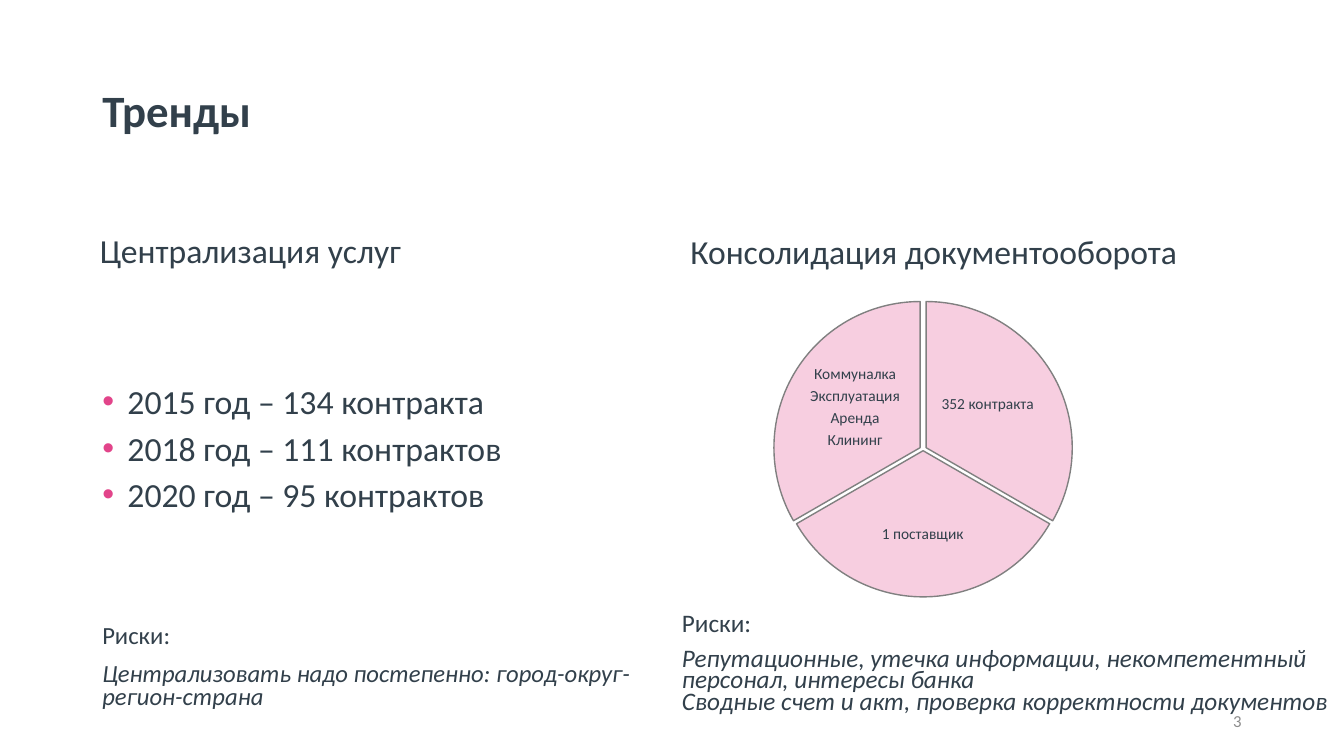
"""Build the trends slide: contract counts, a three-part pie and the risks."""
from lxml import etree
from pptx import Presentation
from pptx import util as u
from pptx.dml.color import RGBColor
from pptx.enum import shapes, text
from pptx.oxml import ns

COLUMNS, ROWS = 160, 90
CELL = u.Inches(7.5) / ROWS
COLORS = {"ink": "32404B", "accent": "E2448A", "sector": "F7CEE0",
          "outline": "808080", "muted": "8C8C8C"}
PIE_LEFT, PIE_TOP, PIE_SIZE, PIE_GAP = 92.5, 35.9, 34.8, 0.36


def color(name):
    return RGBColor.from_string(COLORS[name])


def cells(*values):
    return [u.Emu(round(value * CELL)) for value in values]


def add_text(slide, area, lines, size, ink="ink", anchor="TOP", align="LEFT",
             spacing=0.9, before=0, after=0, inset=None):
    frame = slide.shapes.add_textbox(*cells(*area)).text_frame
    frame.word_wrap = True
    frame.vertical_anchor = getattr(text.MSO_ANCHOR, anchor)
    if inset is not None:
        frame.margin_left = frame.margin_right = u.Inches(inset)
        frame.margin_top = frame.margin_bottom = u.Inches(inset)
    frame.text = "\n".join(lines)
    for paragraph in frame.paragraphs:
        paragraph.alignment = getattr(text.PP_ALIGN, align)
        paragraph.line_spacing = spacing
        paragraph.space_before = u.Pt(before)
        paragraph.space_after = u.Pt(after)
        paragraph.font.name = "Calibri"
        paragraph.font.size = u.Pt(size)
        paragraph.font.color.rgb = color(ink)
    return frame.paragraphs


def add_bullets(slide, area, lines, size):
    for paragraph in add_text(slide, area, lines, size, spacing=0.8, before=10):
        properties = paragraph._p.get_or_add_pPr()
        properties.set("marL", str(u.Inches(0.25)))
        properties.set("indent", str(-u.Inches(0.25)))
        bullet_color = etree.SubElement(properties, ns.qn("a:buClr"))
        etree.SubElement(bullet_color, ns.qn("a:srgbClr"), val=COLORS["accent"])
        etree.SubElement(properties, ns.qn("a:buFont"), typeface="Arial")
        etree.SubElement(properties, ns.qn("a:buChar"), char="•")


def add_risks(slide, area, risks, size, spacing):
    paragraphs = add_text(slide, area, ["Риски:", risks], size,
                          spacing=spacing, before=10)
    paragraphs[1].font.italic = True


def add_sector(slide, start, end, shift):
    left, top = PIE_LEFT + shift[0] * PIE_GAP, PIE_TOP + shift[1] * PIE_GAP
    sector = slide.shapes.add_shape(shapes.MSO_SHAPE.PIE,
                                    *cells(left, top, PIE_SIZE, PIE_SIZE))
    sector.adjustments[0], sector.adjustments[1] = start * 0.6, end * 0.6
    sector.shadow.inherit = False
    sector.fill.solid()
    sector.fill.fore_color.rgb = color("sector")
    sector.line.color.rgb = color("outline")
    sector.line.width = u.Pt(1)


def add_pie(slide):
    sectors = [
        (270, 30, (1, 0), (111.7, 42.4, 11.8, 11.6), ["352 контракта"]),
        (30, 150, (0, 1), (102, 58.2, 15.7, 10.8), ["1 поставщик"]),
        (150, 270, (-1, 0), (95.9, 42.7, 11.8, 11.6),
         ["Коммуналка", "Эксплуатация", "Аренда", "Клининг"]),
    ]
    for start, end, shift, label_area, label in sectors:
        add_sector(slide, start, end, shift)
        add_text(slide, label_area, label, 11, anchor="MIDDLE",
                 align="CENTER", after=3.85, inset=0.02)


def main():
    presentation = Presentation()
    presentation.slide_width, presentation.slide_height = cells(COLUMNS, ROWS)
    slide = presentation.slides.add_slide(presentation.slide_layouts[6])

    title = add_text(slide, (11, 4.8, 138, 17.4), ["Тренды"], 32, anchor="MIDDLE")
    title[0].font.bold = True
    add_text(slide, (10.7, 22, 67.7, 10.8), ["Централизация услуг"], 24,
             anchor="BOTTOM")
    add_text(slide, (81, 22.1, 68, 10.8), ["Консолидация документооборота"], 24,
             anchor="BOTTOM")
    add_bullets(slide, (11, 45.7, 67, 18),
                ["2015 год – 134 контракта", "2018 год – 111 контрактов",
                 "2020 год – 95 контрактов"], 24.1)
    add_risks(slide, (11, 73.9, 67, 14),
              "Централизовать надо постепенно: город-округ-регион-страна",
              17.6, 0.8)
    add_pie(slide)
    add_risks(slide, (80, 72.7, 80, 13.1),
              "Репутационные, утечка информации, некомпетентный персонал, "
              "интересы банка\vСводные счет и акт, проверка корректности документов",
              18, 0.7)
    add_text(slide, (113, 83.4, 36, 4.8), ["3"], 12, ink="muted",
             anchor="MIDDLE", align="RIGHT", spacing=1.0)
    presentation.save("out.pptx")


if __name__ == "__main__":
    main()
